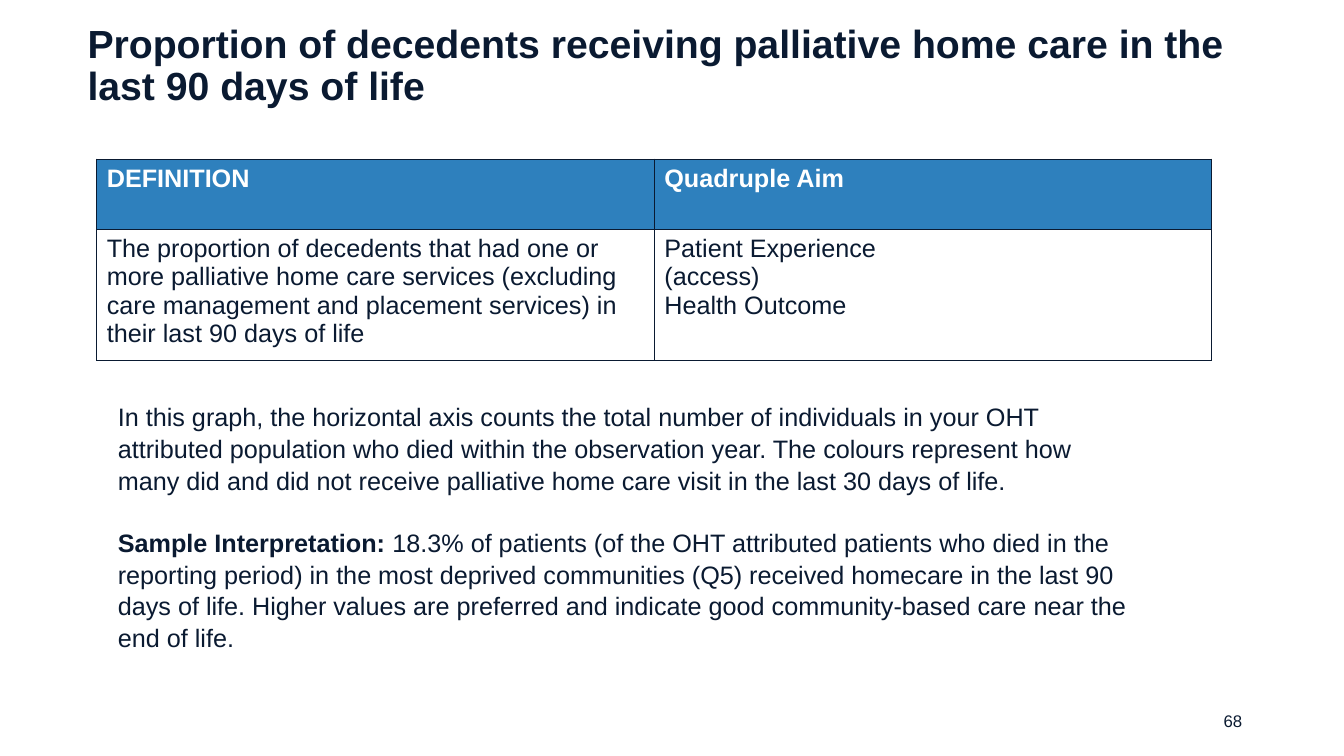
from dataclasses import dataclass
from lxml.etree import SubElement as Sub
from pptx import Presentation
from pptx.dml.color import RGBColor as Rgb
from pptx.enum.text import MSO_ANCHOR as Anchor, PP_ALIGN as Align
from pptx.oxml.ns import qn
from pptx.util import Inches, Pt


@dataclass(frozen=True)
class Theme:
    font: str = "Arial"
    ink: str = "0A1A31"
    blue: str = "2E80BD"
    white: str = "FFFFFF"
    title: int = 28
    body: int = 18
    small: int = 12
    line: int = 1


class Deck:
    def __init__(self, theme):
        self.theme = theme
        self.prs = Presentation()
        self.prs.slide_width = Inches(13.33)
        self.prs.slide_height = Inches(7.5)
        self.slide = self.prs.slides.add_slide(self.prs.slide_layouts[6])

    def style(self, para, size, color, bold=None):
        font = para.font
        font.name = self.theme.font
        font.size = Pt(size)
        font.color.rgb = Rgb.from_string(color)
        font.bold = bold

    def text(self, box, paras, size, bold=None, anchor=Anchor.TOP,
             align=Align.LEFT, lead=1.0, gap=0):
        frame = self.slide.shapes.add_textbox(*map(Inches, box)).text_frame
        frame.word_wrap = True
        frame.vertical_anchor = anchor
        for num, runs in enumerate(paras):
            para = frame.add_paragraph() if num else frame.paragraphs[0]
            para.alignment = align
            para.line_spacing = lead
            if num:
                para.space_before = Pt(gap)
            self.style(para, size, self.theme.ink, bold)
            for words, strong in runs:
                run = para.add_run()
                run.text = words
                if strong:
                    run.font.bold = True

    def border(self, cell):
        props = cell._tc.get_or_add_tcPr()
        for side in ("a:lnL", "a:lnR", "a:lnT", "a:lnB"):
            line = Sub(props, qn(side), w=str(Pt(self.theme.line)))
            fill = Sub(line, qn("a:solidFill"))
            Sub(fill, qn("a:srgbClr"), val=self.theme.ink)

    def table(self, box, rows, heights):
        shape = self.slide.shapes.add_table(
            len(rows), len(rows[0]), *map(Inches, box))
        grid = shape.table
        grid.horz_banding = False
        for r, (row, height) in enumerate(zip(rows, heights)):
            grid.rows[r].height = Inches(height)
            head = r == 0
            for c, words in enumerate(row):
                cell = grid.cell(r, c)
                cell.text = words
                self.border(cell)
                if head:
                    cell.fill.solid()
                    cell.fill.fore_color.rgb = Rgb.from_string(self.theme.blue)
                else:
                    cell.fill.background()
                color = self.theme.white if head else self.theme.ink
                for para in cell.text_frame.paragraphs:
                    self.style(para, self.theme.body, color, head)


def main():
    theme = Theme()
    deck = Deck(theme)
    deck.text((9.42, 6.95, 3, 0.4), [[("68", False)]], theme.small,
              anchor=Anchor.MIDDLE, align=Align.RIGHT)
    title = ("Proportion of decedents receiving palliative home care in the "
             "last 90 days of life")
    deck.text((0.77, 0.24, 11.8, 0.84), [[(title, False)]], theme.title,
              bold=True, anchor=Anchor.MIDDLE, lead=0.9)
    deck.table((0.96, 1.58, 11.06, 2), [
        ("DEFINITION", "Quadruple Aim"),
        ("The proportion of decedents that had one or more palliative home "
         "care services (excluding care management and placement services) "
         "in their last 90 days of life",
         "Patient Experience\v(access)\nHealth Outcome"),
    ], (0.7, 1.3))
    graph = ("In this graph, the horizontal axis counts the total number of "
             "individuals in your OHT attributed population who died within "
             "the observation year. The colours represent how many did and "
             "did not receive palliative home care visit in the last 30 days "
             "of life.")
    sample = ("18.3% of patients (of the OHT attributed patients who died in "
              "the reporting period) in the most deprived communities (Q5) "
              "received homecare in the last 90 days of life. Higher values "
              "are preferred and indicate good community-based care near the "
              "end of life.")
    deck.text((1.07, 3.92, 10.32, 2.52), [
        [(graph, False)],
        [("Sample Interpretation: ", True), (sample, False)],
    ], theme.body, lead=1.05, gap=21.7)
    deck.prs.save("out.pptx")


if __name__ == "__main__":
    main()
